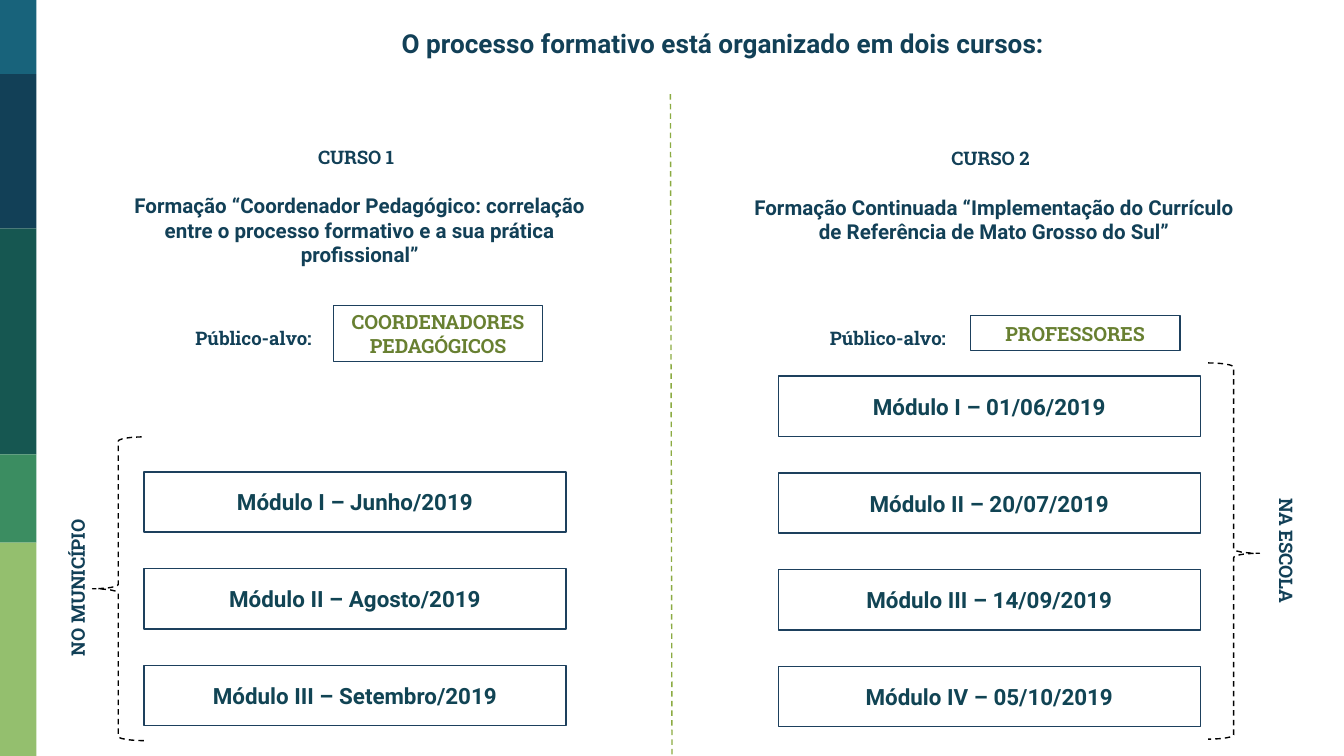
import pptx
import pptx.util
import pptx.dml.color
import pptx.enum.dml
import pptx.enum.shapes
import pptx.enum.text
import pptx.oxml.ns
import lxml.etree

Cm = pptx.util.Cm
SHAPES = pptx.enum.shapes.MSO_SHAPE
ANCHORS = pptx.enum.text.MSO_ANCHOR

COLORS = {
    "navy": "124057",
    "module": "114454",
    "border": "1D405D",
    "audience": "688031",
    "divider": "8BAB42",
    "brace": "000000",
}
BODY_FONT, LABEL_FONT = "Roboto", "Roboto Slab"

# Lengths in centimetres
SLIDE_WIDTH, SLIDE_HEIGHT = 25.4, 14.29
SIDEBAR_WIDTH = 0.69
SIDEBAR = [(0, "18637B"), (1.4, "124057"), (4.32, "165751"), (8.59, "3B8D61"), (10.26, "94BF6E")]
MODULE_WIDTH, MODULE_HEIGHT, MODULE_PITCH = 7.98, 1.14, 1.83
LABEL_WIDTH, LABEL_HEIGHT = 3.18, 0.58
AUDIENCE_WIDTH = 3.96
BRACE_WIDTH = 0.97

TITLE = "O processo formativo está organizado em dois cursos:"
COURSES = [
    {
        "label": "CURSO 1",
        "name": "Formação “Coordenador Pedagógico: correlação entre o processo formativo"
                " e a sua prática profissional”",
        "audience": "COORDENADORES PEDAGÓGICOS",
        "modules": ["Módulo I – Junho/2019", "Módulo II – Agosto/2019", "Módulo III – Setembro/2019"],
        "place": "NO MUNICÍPIO",
        "left": 2.72, "label_top": 2.57, "modules_top": 8.92,
        "audience_box": (6.3, 5.77, 1.07),
        "brace": (1.75, 8.26, 5.74, 0, 0.5),
        "place_box": (-0.23, 10.82, 270),
    },
    {
        "label": "CURSO 2",
        "name": "Formação Continuada “Implementação do Currículo de Referência de Mato Grosso do Sul”",
        "audience": "PROFESSORES",
        "modules": ["Módulo I – 01/06/2019", "Módulo II – 20/07/2019",
                    "Módulo III – 14/09/2019", "Módulo IV – 05/10/2019"],
        "place": "NA ESCOLA",
        "left": 14.71, "label_top": 2.6, "modules_top": 7.11,
        "audience_box": (18.34, 5.97, 0.66),
        "brace": (22.83, 6.86, 7.11, 180, 0.494),
        "place_box": (22.83, 10.13, 90),
    },
]


def rgb(value):
    return pptx.dml.color.RGBColor.from_string(value)


def style_line(line, color, dashed=False):
    line.color.rgb = rgb(color)
    line.width = pptx.util.Pt(0.75)
    if dashed:
        line.dash_style = pptx.enum.dml.MSO_LINE.DASH


def write_text(shape, text, font, size, color, anchor=ANCHORS.MIDDLE, spacing=None):
    frame = shape.text_frame
    frame.word_wrap = True
    frame.vertical_anchor = anchor
    frame.margin_left = frame.margin_right = frame.margin_top = frame.margin_bottom = Cm(0.25)
    paragraph = frame.paragraphs[0]
    paragraph.text = text
    paragraph.alignment = pptx.enum.text.PP_ALIGN.CENTER
    if spacing:
        paragraph.line_spacing = spacing
    paragraph.font.name = font
    paragraph.font.size = pptx.util.Pt(size)
    paragraph.font.bold = True
    paragraph.font.color.rgb = rgb(color)


def add_text(slide, box, text, font, size, **options):
    shape = slide.shapes.add_textbox(*map(Cm, box))
    write_text(shape, text, font, size, COLORS["navy"], **options)
    return shape


def add_label(slide, left, top, text):
    return add_text(slide, (left, top, LABEL_WIDTH, LABEL_HEIGHT), text, LABEL_FONT, 10, spacing=1.5)


def add_plain_shape(slide, kind, box):
    shape = slide.shapes.add_shape(kind, *map(Cm, box))
    shape.shadow.inherit = False
    shape.fill.background()
    return shape


def add_framed_text(slide, box, text, font, size, color):
    shape = add_plain_shape(slide, SHAPES.RECTANGLE, box)
    style_line(shape.line, COLORS["border"])
    write_text(shape, text, font, size, color)


def add_sidebar(slide):
    bottoms = [top for top, _ in SIDEBAR[1:]] + [SLIDE_HEIGHT]
    for (top, color), bottom in zip(SIDEBAR, bottoms):
        band = add_plain_shape(slide, SHAPES.RECTANGLE, (0, top, SIDEBAR_WIDTH, bottom - top))
        band.fill.solid()
        band.fill.fore_color.rgb = rgb(color)
        band.line.fill.background()


def add_divider(slide):
    divider = slide.shapes.add_connector(
        pptx.enum.shapes.MSO_CONNECTOR.STRAIGHT, Cm(12.67), Cm(1.78), Cm(12.7), Cm(SLIDE_HEIGHT))
    style_line(divider.line, COLORS["divider"], dashed=True)
    properties = divider.element.spPr
    lxml.etree.SubElement(properties, pptx.oxml.ns.qn("a:effectLst"))


def add_course(slide, course):
    left, label_top = course["left"], course["label_top"]
    add_label(slide, left + 2.42, label_top, course["label"])
    add_text(slide, (left - 0.92, label_top + 0.83, 10, 1.8), course["name"], BODY_FONT, 11,
             anchor=ANCHORS.TOP)

    add_label(slide, left + 0.48, 5.99, "Público-alvo:")
    audience_left, audience_top, audience_height = course["audience_box"]
    add_framed_text(slide, (audience_left, audience_top, AUDIENCE_WIDTH, audience_height),
                    course["audience"], LABEL_FONT, 10.5, COLORS["audience"])

    for index, module in enumerate(course["modules"]):
        top = course["modules_top"] + index * MODULE_PITCH
        add_framed_text(slide, (left, top, MODULE_WIDTH, MODULE_HEIGHT),
                        module, BODY_FONT, 12, COLORS["module"])

    brace_left, brace_top, brace_height, rotation, point = course["brace"]
    brace = add_plain_shape(slide, SHAPES.LEFT_BRACE, (brace_left, brace_top, BRACE_WIDTH, brace_height))
    brace.rotation = rotation
    brace.adjustments[1] = point
    style_line(brace.line, COLORS["brace"], dashed=True)

    place_left, place_top, place_rotation = course["place_box"]
    add_label(slide, place_left, place_top, course["place"]).rotation = place_rotation


def main():
    presentation = pptx.Presentation()
    presentation.slide_width, presentation.slide_height = Cm(SLIDE_WIDTH), Cm(SLIDE_HEIGHT)
    slide = presentation.slides.add_slide(presentation.slide_layouts[6])
    add_sidebar(slide)
    add_text(slide, (4.65, -0.03, 18.03, 1.3), TITLE, BODY_FONT, 14, anchor=ANCHORS.TOP, spacing=1.5)
    for course in COURSES:
        add_course(slide, course)
    add_divider(slide)
    presentation.save("out.pptx")


if __name__ == "__main__":
    main()
